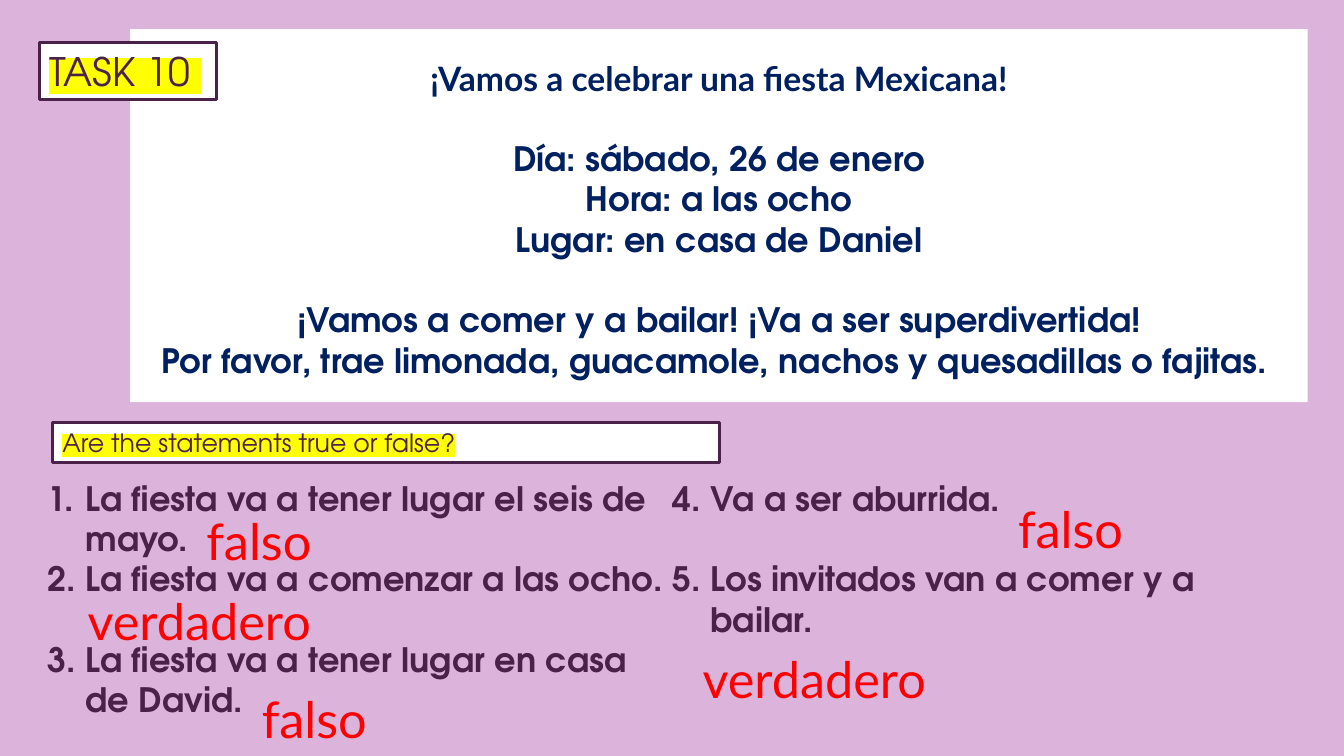
"""Build the Mexican party reading task slide."""
from dataclasses import dataclass

from lxml.etree import SubElement
from pptx import Presentation
from pptx.dml.color import RGBColor
from pptx.enum.shapes import MSO_SHAPE
from pptx.enum.text import MSO_ANCHOR, MSO_AUTO_SIZE, PP_ALIGN
from pptx.oxml.ns import qn
from pptx.util import Inches, Pt


@dataclass(frozen=True)
class Theme:
    """Colours, fonts and type sizes of the slide."""
    backdrop: str = "DCB4DB"
    paper: str = "FFFFFF"
    navy: str = "002060"
    plum: str = "4A2249"
    red: str = "FF0000"
    marker: str = "FFFF00"
    plain: str = "Lato"
    round: str = "TeX Gyre Adventor"
    label: int = 18
    body: int = 24
    title: int = 28
    answer: int = 36
    line_gap: float = 28.8


THEME = Theme()
WIDTH, HEIGHT = 13.33, 7.5
RIGHT_EDGE = 12.97

INVITATION = [
    ("¡Vamos a celebrar una fiesta Mexicana!", THEME.plain, True),
    ("Día: sábado, 26 de enero", THEME.round, False),
    ("Hora: a las ocho", THEME.round, False),
    ("Lugar: en casa de Daniel", THEME.round, True),
    ("¡Vamos a comer y a bailar! ¡Va a ser superdivertida!", THEME.round, False),
    ("Por favor, trae limonada, guacamole, nachos y quesadillas o fajitas. ", THEME.round, False),
]
STATEMENTS = [
    ("La fiesta va a tener lugar el seis de mayo.", False),
    ("La fiesta va a comenzar a las ocho.", True),
    ("La fiesta va a tener lugar en casa de David.", False),
    ("Va a ser aburrida.", True),
    ("Los invitados van a comer y a bailar.", False),
]
ANSWER_WIDTHS = {"falso": 1.33, "verdadero": 2.77}
ANSWERS = [
    ("falso", 1.95, 5.01),
    ("verdadero", 0.77, 5.8),
    ("falso", 2.5, 6.78),
    ("falso", 10, 4.89),
    ("verdadero", 6.87, 6.38),
]
LABELS = [
    ("TASK 10 ", THEME.title, (0.39, 0.42, 1.76, 0.57)),
    ("Are the statements true or false?", THEME.label, (0.52, 4.19, 6.62, 0.4)),
]


def apply(target, **values):
    for name, value in values.items():
        setattr(target, name, value)


def write(para, text, size, font, colour, bold=False):
    span = para.add_run()
    span.text = text
    apply(span.font, size=Pt(size), name=font, bold=bold)
    span.font.color.rgb = RGBColor.from_string(colour)
    return span


def paragraphs(frame, count):
    return [frame.paragraphs[0]] + [frame.add_paragraph() for _ in range(count - 1)]


def add_panel(page, place, outline=None):
    panel = page.shapes.add_shape(MSO_SHAPE.RECTANGLE, *map(Inches, place))
    panel.shadow.inherit = False
    panel.fill.solid()
    panel.fill.fore_color.rgb = RGBColor.from_string(THEME.paper)
    if outline:
        panel.line.color.rgb = RGBColor.from_string(outline)
        panel.line.width = Pt(2)
    else:
        panel.line.fill.background()
    apply(panel.text_frame, word_wrap=True, vertical_anchor=MSO_ANCHOR.TOP)
    return panel.text_frame


def add_text(page, place, wrap):
    frame = page.shapes.add_textbox(*map(Inches, place)).text_frame
    apply(frame, word_wrap=wrap, auto_size=MSO_AUTO_SIZE.SHAPE_TO_FIT_TEXT)
    return frame


def add_invitation(page):
    left = 1.29
    frame = add_panel(page, (left, 0.29, RIGHT_EDGE - left, 3.7))
    frame.margin_top = Inches(0.28)
    for para, (text, font, gap) in zip(paragraphs(frame, len(INVITATION)), INVITATION):
        apply(para, alignment=PP_ALIGN.CENTER, space_after=Pt(THEME.line_gap if gap else 0))
        write(para, text, THEME.body, font, THEME.navy, bold=True)


def add_statements(page):
    left = 0.37
    frame = add_text(page, (left, 4.69, RIGHT_EDGE - left, 2.53), wrap=True)
    frame._txBody.bodyPr.set("numCol", "2")
    hang = Inches(0.38)
    for para, (text, gap) in zip(paragraphs(frame, len(STATEMENTS)), STATEMENTS):
        para.space_after = Pt(THEME.line_gap if gap else 0)
        write(para, text, THEME.body, THEME.round, THEME.plum, bold=True)
        layout = para._p.get_or_add_pPr()
        layout.set("marL", str(hang))
        layout.set("indent", str(-hang))
        SubElement(layout, qn("a:buAutoNum"), type="arabicPeriod")


def add_answers(page):
    for text, left, top in ANSWERS:
        frame = add_text(page, (left, top, ANSWER_WIDTHS[text], 0.71), wrap=False)
        write(frame.paragraphs[0], text, THEME.answer, THEME.plain, THEME.red)


def add_labels(page):
    for text, size, place in LABELS:
        frame = add_panel(page, place, THEME.plum)
        frame.auto_size = MSO_AUTO_SIZE.SHAPE_TO_FIT_TEXT
        para = frame.paragraphs[0]
        para.alignment = PP_ALIGN.LEFT
        look = write(para, text, size, THEME.round, THEME.plum)._r.get_or_add_rPr()
        marker = SubElement(look, qn("a:highlight"))
        SubElement(marker, qn("a:srgbClr"), val=THEME.marker)
        look.find(qn("a:latin")).addprevious(marker)


def main():
    deck = Presentation()
    apply(deck, slide_width=Inches(WIDTH), slide_height=Inches(HEIGHT))
    page = deck.slides.add_slide(deck.slide_layouts[6])
    page.background.fill.solid()
    page.background.fill.fore_color.rgb = RGBColor.from_string(THEME.backdrop)
    for add_part in (add_invitation, add_statements, add_answers, add_labels):
        add_part(page)
    deck.save("out.pptx")


if __name__ == "__main__":
    main()
